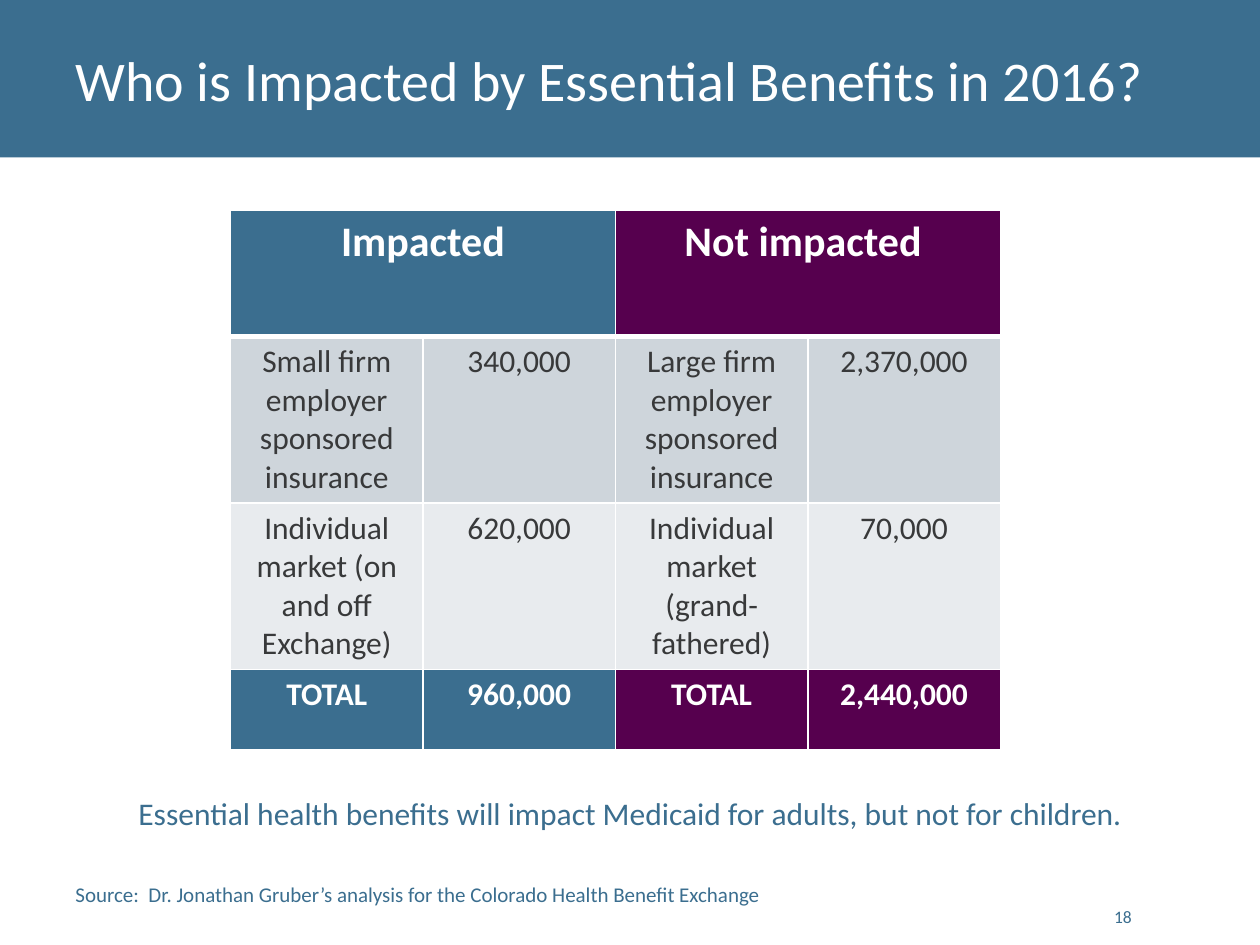
import pptx
import pptx.dml.color
import pptx.enum.shapes
import pptx.enum.text
import pptx.oxml
import pptx.oxml.ns
import pptx.util
from dataclasses import dataclass

Inches = pptx.util.Inches
Align = pptx.enum.text.PP_ALIGN
Anchor = pptx.enum.text.MSO_ANCHOR


@dataclass(frozen=True)
class Theme:
    face: str = "Calibri"
    blue: str = "3B6E8F"
    plum: str = "56004E"
    white: str = "FFFFFF"
    ink: str = "38393A"
    dark: str = "CED5DB"
    light: str = "E8EBEE"
    title: int = 32
    head: int = 24
    body: int = 18
    small: int = 12
    page: int = 10


THEME = Theme()


def rgb(code):
    return pptx.dml.color.RGBColor.from_string(code)


def write(frame, text, size, color, align=Align.LEFT, bold=False):
    """Put one styled paragraph in a text frame."""
    para = frame.paragraphs[0]
    para.text = text
    para.alignment = align
    style = {"name": THEME.face, "size": pptx.util.Pt(size), "bold": bold}
    for key, value in style.items():
        setattr(para.font, key, value)
    para.font.color.rgb = rgb(color)


def place(shape, left, top, width, height):
    box = {"left": left, "top": top, "width": width, "height": height}
    for key, value in box.items():
        setattr(shape, key, Inches(value))


def add_title(slide, text):
    # Band goes behind the title placeholder
    kind = pptx.enum.shapes.MSO_SHAPE.RECTANGLE
    band = slide.shapes.add_shape(kind, 0, 0, Inches(10), Inches(1.25))
    band.shadow.inherit = False
    band.fill.solid()
    band.fill.fore_color.rgb = rgb(THEME.blue)
    band.line.fill.background()
    band.element.getparent().insert(2, band.element)

    title = slide.shapes.title
    place(title, 0.5, 0, 9, 1.25)
    frame = title.text_frame
    frame.auto_size = pptx.enum.text.MSO_AUTO_SIZE.NONE
    frame.vertical_anchor = Anchor.MIDDLE
    write(frame, text, THEME.title, THEME.white)


def add_note(slide, text, box, size, wrap=False, anchor=Anchor.TOP,
             align=Align.LEFT):
    note = slide.shapes.add_textbox(*map(Inches, box))
    note.text_frame.word_wrap = wrap
    note.text_frame.vertical_anchor = anchor
    write(note.text_frame, text, size, THEME.blue, align)


def add_rule(cell, side, width):
    """Draw one white cell border; sides come in order before the fill."""
    line = pptx.oxml.parse_xml(
        f'<a:{side} {pptx.oxml.ns.nsdecls("a")} w="{pptx.util.Pt(width)}">'
        f'<a:solidFill><a:srgbClr val="{THEME.white}"/></a:solidFill>'
        f'</a:{side}>')
    cell._tc.get_or_add_tcPr().append(line)


def fill_cell(cell, text, fill, size, color, bold, base=1):
    for side, width in {"lnL": 1, "lnR": 1, "lnT": 1, "lnB": base}.items():
        add_rule(cell, side, width)
    cell.fill.solid()
    cell.fill.fore_color.rgb = rgb(fill)
    write(cell.text_frame, text, size, color, Align.CENTER, bold)


def add_grid(slide, heads, rows, total):
    highs = [1, 1.3, 1.3, 0.64]
    shape = slide.shapes.add_table(
        len(highs), 4, Inches(1.83), Inches(1.67), Inches(6.11),
        Inches(sum(highs)))
    table = shape.table
    for row, high in zip(table.rows, highs):
        row.height = Inches(high)
    sides = [THEME.blue, THEME.plum]

    # Merged heads
    for i, (text, fill) in enumerate(zip(heads, sides)):
        cell = table.cell(0, 2 * i)
        cell.merge(table.cell(0, 2 * i + 1))
        fill_cell(cell, text, fill, THEME.head, THEME.white, True, 3)

    # Banded body
    for r, (row, fill) in enumerate(zip(rows, [THEME.dark, THEME.light]), 1):
        for c, text in enumerate(row):
            fill_cell(table.cell(r, c), text, fill, THEME.body, THEME.ink,
                      False)

    # Totals in the colour of their side
    for c, text in enumerate(total):
        fill_cell(table.cell(len(highs) - 1, c), text, sides[c // 2],
                  THEME.body, THEME.white, True)


def main():
    deck = pptx.Presentation()
    deck.slide_width, deck.slide_height = Inches(10), Inches(7.5)
    slide = deck.slides.add_slide(deck.slide_layouts[5])

    add_title(slide, "Who is Impacted by Essential Benefits in 2016?")
    add_grid(
        slide,
        ["Impacted", "Not impacted "],
        [["Small firm employer sponsored insurance", "340,000",
          "Large firm employer sponsored insurance", "2,370,000"],
         ["Individual market (on and off Exchange)", "620,000",
          "Individual market (grand-fathered)", "70,000"]],
        ["TOTAL", "960,000", "TOTAL", "2,440,000"])

    # Notes and page number
    add_note(slide, "Source:  Dr. Jonathan Gruber’s analysis for the "
             "Colorado Health Benefit Exchange",
             (0.5, 6.95, 5.69, 0.3), THEME.small)
    add_note(slide, "Essential health benefits will impact Medicaid for "
             "adults, but not for children.",
             (1, 6.25, 8.04, 0.4), THEME.body)
    add_note(slide, "18", (8.68, 7.01, 0.4, 0.4), THEME.page, True,
             Anchor.BOTTOM, Align.RIGHT)
    deck.save("out.pptx")


if __name__ == "__main__":
    main()
